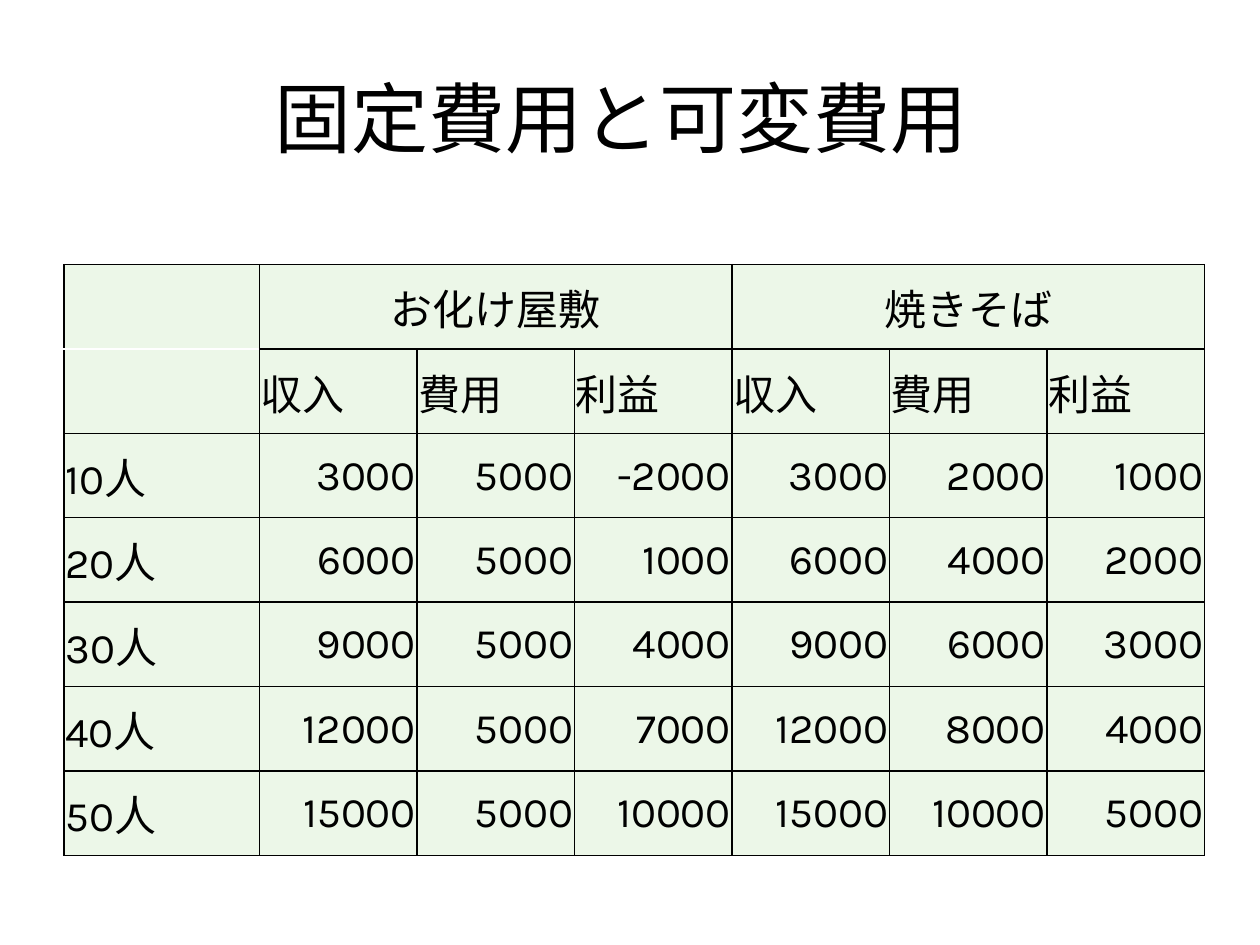
from dataclasses import dataclass

from lxml import etree
from pptx import Presentation
from pptx.dml.color import RGBColor
from pptx.enum.text import MSO_ANCHOR, MSO_AUTO_SIZE, PP_ALIGN
from pptx.oxml.ns import qn
from pptx.util import Inches, Pt

MIDDLE = MSO_ANCHOR.MIDDLE
NO_FIT = MSO_AUTO_SIZE.NONE
LEFT, CENTER, RIGHT = PP_ALIGN.LEFT, PP_ALIGN.CENTER, PP_ALIGN.RIGHT
TITLE_ONLY = 5


@dataclass(frozen=True)
class Theme:
    font: str = "Karla"
    ink: str = "000000"
    cell: str = "ECF7E8"
    blank: str = "FFFFFF"
    title_size: int = 44
    table_size: int = 24
    border: int = 1


THEME = Theme()

TITLE = "固定費用と可変費用 "
STALLS = ["お化け屋敷", "焼きそば"]
MEASURES = ["収入", "費用", "利益"]
# Visitors: revenue, cost and profit of each stall in turn
FIGURES = {
    "10人": [3000, 5000, -2000, 3000, 2000, 1000],
    "20人": [6000, 5000, 1000, 6000, 4000, 2000],
    "30人": [9000, 5000, 4000, 9000, 6000, 3000],
    "40人": [12000, 5000, 7000, 12000, 8000, 4000],
    "50人": [15000, 5000, 10000, 15000, 10000, 5000],
}

TABLE_LEFT, TABLE_TOP = 0.51, 2.1
LABEL_WIDTH, FIGURE_WIDTH = 1.55, 1.25
ROW_HEIGHT = 0.67


def style_paragraph(para, size, align):
    para.alignment = align
    para.font.name = THEME.font
    para.font.size = Pt(size)
    para.font.color.rgb = RGBColor.from_string(THEME.ink)


def add_title(page):
    title = page.shapes.title
    title.left, title.top = Inches(0.5), Inches(0.3)
    title.width, title.height = Inches(9), Inches(1.25)
    frame = title.text_frame
    frame.text = TITLE
    frame.auto_size = NO_FIT
    frame.vertical_anchor = MIDDLE
    style_paragraph(frame.paragraphs[0], THEME.title_size, CENTER)


def set_borders(cell, top, bottom):
    properties = cell._tc.get_or_add_tcPr()
    colors = {"lnL": THEME.ink, "lnR": THEME.ink, "lnT": top, "lnB": bottom}
    for side, color in colors.items():
        line = etree.SubElement(properties, qn(f"a:{side}"), w=str(Pt(THEME.border)))
        fill = etree.SubElement(line, qn("a:solidFill"))
        etree.SubElement(fill, qn("a:srgbClr"), val=color)


def fill_cell(cell, text, align, top=THEME.ink, bottom=THEME.ink):
    set_borders(cell, top, bottom)
    cell.fill.solid()
    cell.fill.fore_color.rgb = RGBColor.from_string(THEME.cell)
    cell.vertical_anchor = MIDDLE
    cell.margin_left = cell.margin_right = cell.margin_top = Inches(0.01)
    cell.margin_bottom = 0
    cell.text = text
    style_paragraph(cell.text_frame.paragraphs[0], THEME.table_size, align)


def add_cost_table(page):
    span = len(MEASURES)
    rows, columns = 2 + len(FIGURES), 1 + span * len(STALLS)
    frame = page.shapes.add_table(
        rows, columns, Inches(TABLE_LEFT), Inches(TABLE_TOP),
        Inches(LABEL_WIDTH + FIGURE_WIDTH * (columns - 1)),
        Inches(ROW_HEIGHT * rows))
    table = frame.table
    table.first_row = table.horz_banding = False
    for index, column in enumerate(table.columns):
        column.width = Inches(FIGURE_WIDTH if index else LABEL_WIDTH)
    for row in table.rows:
        row.height = Inches(ROW_HEIGHT)

    # Two blank corner cells, parted by a white line
    fill_cell(table.cell(0, 0), "", LEFT, bottom=THEME.blank)
    fill_cell(table.cell(1, 0), "", LEFT, top=THEME.blank)

    # Stall names over their measures
    for index, stall in enumerate(STALLS):
        first = 1 + index * span
        for offset, measure in enumerate(MEASURES):
            fill_cell(table.cell(0, first + offset), "" if offset else stall, CENTER)
            fill_cell(table.cell(1, first + offset), measure, LEFT)
        table.cell(0, first).merge(table.cell(0, first + span - 1))

    # One row for each number of visitors
    for row, (visitors, figures) in enumerate(FIGURES.items(), start=2):
        fill_cell(table.cell(row, 0), visitors, LEFT)
        for column, figure in enumerate(figures, start=1):
            fill_cell(table.cell(row, column), str(figure), RIGHT)


def main():
    deck = Presentation()
    deck.slide_width, deck.slide_height = Inches(10), Inches(7.5)
    page = deck.slides.add_slide(deck.slide_layouts[TITLE_ONLY])
    add_title(page)
    add_cost_table(page)
    deck.save("out.pptx")


if __name__ == "__main__":
    main()
